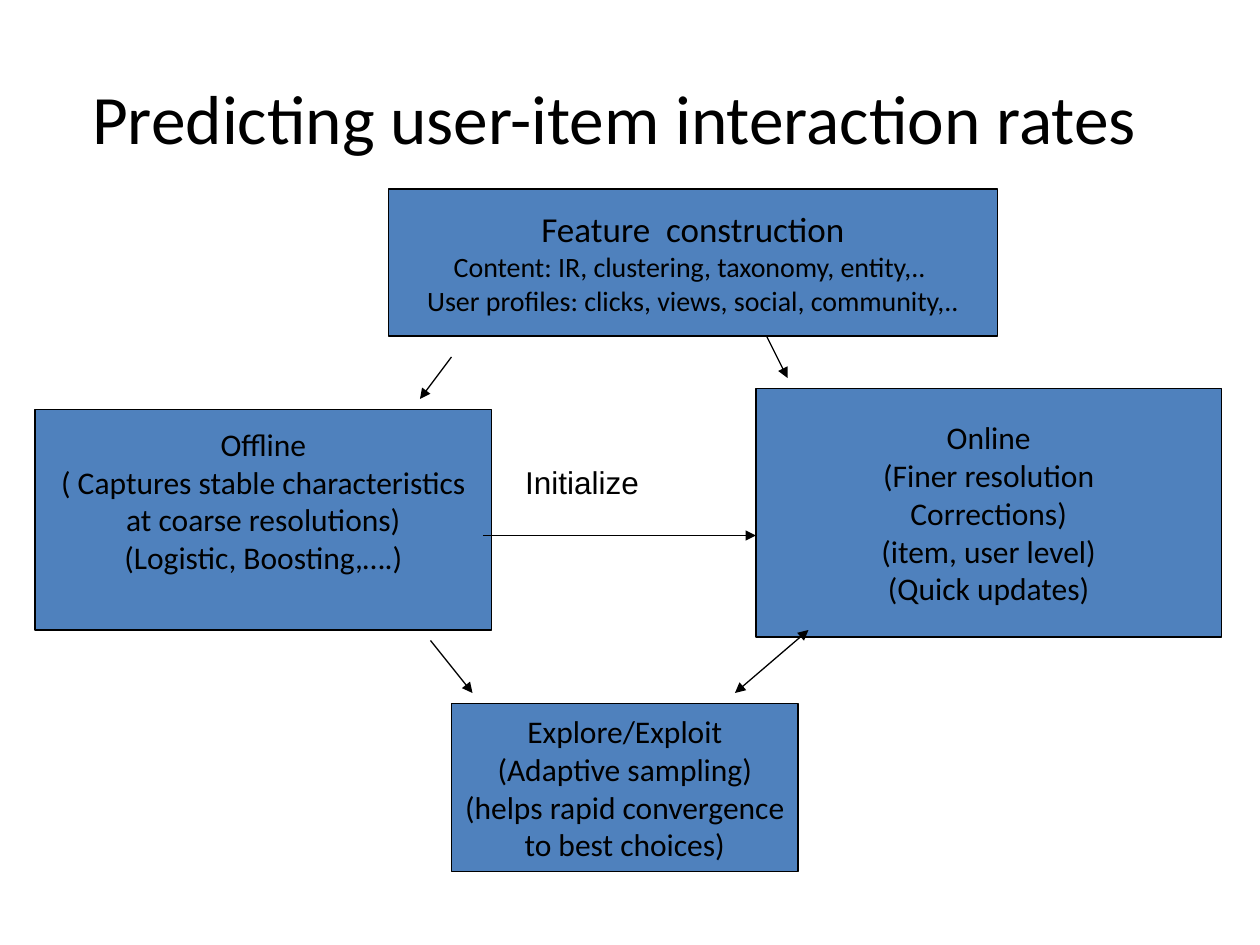
import pptx
import pptx.dml.color
import pptx.enum.dml
import pptx.enum.shapes
import pptx.enum.text
import pptx.oxml
import pptx.oxml.ns
import pptx.util
from dataclasses import dataclass

Pt = pptx.util.Pt
RGB = pptx.dml.color.RGBColor
ALIGN = pptx.enum.text.PP_ALIGN
MIDDLE = pptx.enum.text.MSO_ANCHOR.MIDDLE
TOP = pptx.enum.text.MSO_ANCHOR.TOP


@dataclass(frozen=True)
class Theme:
    ink: RGB = RGB(0, 0, 0)
    box_fill: RGB = RGB(0x4F, 0x81, 0xBD)
    font: str = "Calibri"
    label_font: str = "Arial"
    title: float = 39.6
    heading: float = 20
    body: float = 18
    detail: float = 16
    stroke: float = 0.75


THEME = Theme()

# Content: places are (left, top, width, height) in points
TITLE = ("Predicting user-item interaction rates", (36, 21.6, 648, 90))
STAGES = [
    dict(place=(20, 234, 261, 126), bottom=25.6,
         lines=["Offline", "( Captures stable characteristics",
                "at coarse resolutions)", "(Logistic, Boosting,….)"]),
    dict(place=(222, 108, 348, 84), sizes=[THEME.heading, THEME.detail, THEME.detail],
         lines=["Feature  construction",
                "Content: IR, clustering, taxonomy, entity,.. ",
                "User profiles: clicks, views, social, community,.."]),
    dict(place=(432, 222, 266, 142),
         lines=["Online", "(Finer resolution", "Corrections)",
                "(item, user level)", "(Quick updates)"]),
    dict(place=(258, 402, 198, 96),
         lines=["Explore/Exploit", "(Adaptive sampling)",
                "(helps rapid convergence", "to best choices)"]),
]
INITIALIZE = ("Initialize", (293, 261, 79, 29))
# Arrows: start, end, whether both ends carry a head
ARROWS = [
    ((276, 306), (432, 306), False),   # offline to online
    ((246, 366), (270, 396), False),   # offline to explore/exploit
    ((462, 360), (420, 396), True),    # online and explore/exploit
    ((258, 204), (240, 228), False),   # features to offline
    ((438, 192), (450, 216), False),   # features to online
]


def write_text(frame, lines, sizes=None, font=THEME.font, align=ALIGN.CENTER,
               anchor=MIDDLE, wrap=False, right=7.2, bottom=3.6):
    """Fill a text frame, one paragraph per line."""
    frame.auto_size = pptx.enum.text.MSO_AUTO_SIZE.NONE
    frame.word_wrap = wrap
    frame.vertical_anchor = anchor
    frame.margin_left, frame.margin_right = Pt(7.2), Pt(right)
    frame.margin_top, frame.margin_bottom = Pt(3.6), Pt(bottom)
    sizes = sizes or [THEME.body] * len(lines)
    for number, (line, size) in enumerate(zip(lines, sizes)):
        paragraph = frame.add_paragraph() if number else frame.paragraphs[0]
        paragraph.alignment = align
        run = paragraph.add_run()
        run.text = line
        run.font.name, run.font.size = font, Pt(size)
        run.font.color.rgb = THEME.ink


def add_stage(slide, place, lines, **text_format):
    box = slide.shapes.add_shape(pptx.enum.shapes.MSO_SHAPE.RECTANGLE, *map(Pt, place))
    box.shadow.inherit = False
    box.fill.solid()
    box.fill.fore_color.rgb = THEME.box_fill
    box.line.color.rgb = THEME.ink
    box.line.width = Pt(THEME.stroke)
    write_text(box.text_frame, lines, **text_format)


def add_arrow(slide, start, end, double):
    arrow = slide.shapes.add_connector(
        pptx.enum.shapes.MSO_CONNECTOR.STRAIGHT, *map(Pt, start + end))
    arrow.line.color.rgb = THEME.ink
    arrow.line.width = Pt(THEME.stroke)
    properties = arrow.line._get_or_add_ln()
    for end_tag in ["a:headEnd", "a:tailEnd"] if double else ["a:tailEnd"]:
        head = pptx.oxml.xmlchemy.OxmlElement(end_tag)
        head.set("type", "triangle")
        properties.append(head)
    arrow._element.spPr.append(pptx.oxml.xmlchemy.OxmlElement("a:effectLst"))


def main():
    deck = pptx.Presentation()
    deck.slide_width, deck.slide_height = Pt(720), Pt(540)
    slide = deck.slides.add_slide(deck.slide_layouts[5])

    # Title, set slightly left of centre by its wider right margin
    heading, place = TITLE
    title = slide.shapes.title
    title.left, title.top, title.width, title.height = map(Pt, place)
    write_text(title.text_frame, [heading], sizes=[THEME.title], wrap=True, right=25.2)

    # Stages of the flow
    for stage in STAGES:
        add_stage(slide, **stage)

    # Label and arrows
    caption, place = INITIALIZE
    label = slide.shapes.add_textbox(*map(Pt, place))
    write_text(label.text_frame, [caption], font=THEME.label_font,
               align=ALIGN.LEFT, anchor=TOP)
    for start, end, double in ARROWS:
        add_arrow(slide, start, end, double)

    deck.save("out.pptx")


if __name__ == "__main__":
    main()
